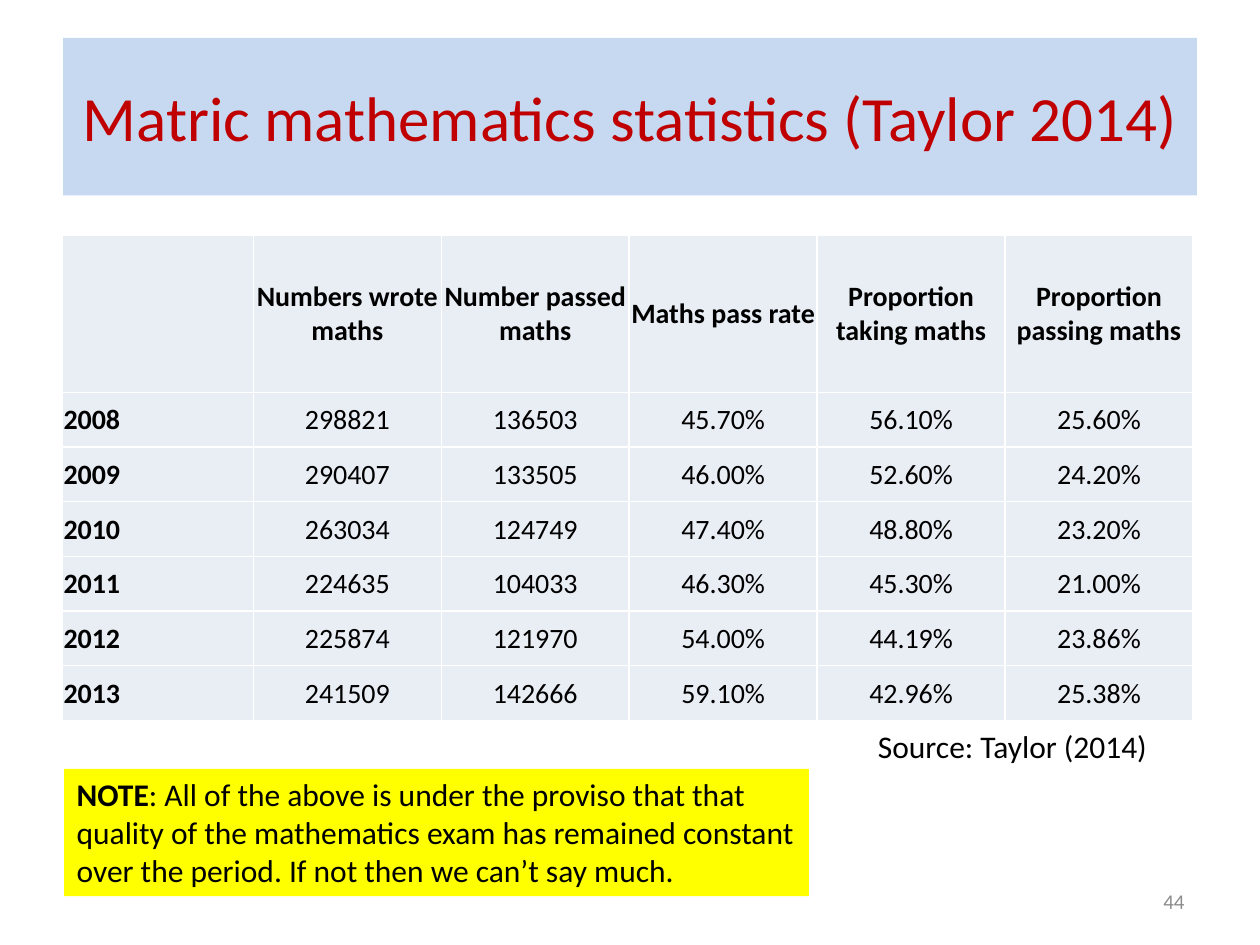
from dataclasses import dataclass

from lxml import etree
from pptx import Presentation
from pptx.dml.color import RGBColor
from pptx.enum import shapes, text
from pptx.oxml.ns import qn
from pptx.util import Pt


@dataclass(frozen=True)
class Theme:
    font: str = "Calibri"
    title_size: float = 36
    body_size: float = 18
    table_size: float = 16
    number_size: float = 12
    ink: str = "000000"
    title_ink: str = "C00000"
    number_ink: str = "8C8C8C"
    title_fill: str = "C6D9F1"
    cell_fill: str = "E9EDF4"
    note_fill: str = "FFFF00"
    border: str = "FFFFFF"


@dataclass(frozen=True)
class Box:
    left: float
    top: float
    width: float
    height: float

    def lengths(self):
        return Pt(self.left), Pt(self.top), Pt(self.width), Pt(self.height)


@dataclass(frozen=True)
class MatricYear:
    year: str
    wrote: str
    passed: str
    pass_rate: str
    taking: str
    passing: str

    def cells(self):
        return (self.year, self.wrote, self.passed, self.pass_rate, self.taking, self.passing)


THEME = Theme()
LEFT, CENTER, RIGHT = text.PP_ALIGN.LEFT, text.PP_ALIGN.CENTER, text.PP_ALIGN.RIGHT
MIDDLE, TOP = text.MSO_ANCHOR.MIDDLE, text.MSO_ANCHOR.TOP

TITLE_BOX = Box(36, 21.6, 648, 90)
TABLE_BOX = Box(35.6, 134.2, 646.2, 277.5)
SOURCE_BOX = Box(494.6, 412, 187.2, 29)
NOTE_BOX = Box(36.7, 439.4, 425.5, 72.7)
NUMBER_BOX = Box(516, 500.5, 168, 28.7)
YEAR_WIDTH, HEADER_HEIGHT, CELL_MARGIN = 109.2, 90, 0.72

HEADERS = ("", "Numbers wrote maths", "Number passed maths", "Maths pass rate",
           "Proportion taking maths", "Proportion passing maths")
RESULTS = (
    MatricYear("2008", "298821", "136503", "45.70%", "56.10%", "25.60%"),
    MatricYear("2009", "290407", "133505", "46.00%", "52.60%", "24.20%"),
    MatricYear("2010", "263034", "124749", "47.40%", "48.80%", "23.20%"),
    MatricYear("2011", "224635", "104033", "46.30%", "45.30%", "21.00%"),
    MatricYear("2012", "225874", "121970", "54.00%", "44.19%", "23.86%"),
    MatricYear("2013", "241509", "142666", "59.10%", "42.96%", "25.38%"),
)
NOTE = (": All of the above is under the proviso that that quality of the mathematics exam "
        "has remained constant over the period. If not then we can’t say much.")


def write(frame, words: str, *, size: float, color: str = THEME.ink, bold: bool = False,
          align=LEFT, anchor=TOP) -> None:
    """Append a run to the frame's first paragraph."""
    frame.word_wrap = True
    frame.vertical_anchor = anchor
    paragraph = frame.paragraphs[0]
    paragraph.alignment = align
    run = paragraph.add_run()
    run.text = words
    run.font.name = THEME.font
    run.font.size = Pt(size)
    run.font.bold = bold
    run.font.color.rgb = RGBColor.from_string(color)


def fill(target, color: str) -> None:
    target.fill.solid()
    target.fill.fore_color.rgb = RGBColor.from_string(color)


def add_borders(cell) -> None:
    """Draw one-point lines; they must precede the fill in the cell's XML."""
    properties = cell._tc.get_or_add_tcPr()
    for place, side in enumerate(("lnL", "lnR", "lnT", "lnB")):
        line = etree.Element(qn(f"a:{side}"), w=str(Pt(1)))
        solid = etree.SubElement(line, qn("a:solidFill"))
        etree.SubElement(solid, qn("a:srgbClr"), val=THEME.border)
        properties.insert(place, line)


def format_cell(cell, words: str, *, bold: bool, align) -> None:
    fill(cell, THEME.cell_fill)
    add_borders(cell)
    cell.margin_left = cell.margin_right = cell.margin_top = Pt(CELL_MARGIN)
    cell.margin_bottom = Pt(0)
    cell.vertical_anchor = MIDDLE
    if words:
        write(cell.text_frame, words, size=THEME.table_size, bold=bold, align=align,
              anchor=None)


def add_results(slide) -> None:
    rows = (HEADERS, *(result.cells() for result in RESULTS))
    table = slide.shapes.add_table(len(rows), len(HEADERS), *TABLE_BOX.lengths()).table
    measure_width = (TABLE_BOX.width - YEAR_WIDTH) / (len(HEADERS) - 1)
    year_height = (TABLE_BOX.height - HEADER_HEIGHT) / len(RESULTS)
    for c, column in enumerate(table.columns):
        column.width = Pt(measure_width if c else YEAR_WIDTH)
    for r, row in enumerate(rows):
        table.rows[r].height = Pt(year_height if r else HEADER_HEIGHT)
        for c, words in enumerate(row):
            format_cell(table.cell(r, c), words, bold=r == 0 or c == 0,
                        align=CENTER if c else text.PP_ALIGN.JUSTIFY)


def add_title(slide) -> None:
    title = slide.shapes.title
    title.left, title.top, title.width, title.height = TITLE_BOX.lengths()
    fill(title, THEME.title_fill)
    write(title.text_frame, "Matric mathematics statistics (Taylor 2014)",
          size=THEME.title_size, color=THEME.title_ink, align=CENTER, anchor=MIDDLE)


def add_note(slide) -> None:
    note = slide.shapes.add_shape(shapes.MSO_SHAPE.RECTANGLE, *NOTE_BOX.lengths())
    note.shadow.inherit = False
    note.line.fill.background()
    fill(note, THEME.note_fill)
    write(note.text_frame, "NOTE", size=THEME.body_size, bold=True)
    write(note.text_frame, NOTE, size=THEME.body_size)


def add_label(slide, box: Box, words: str, **style) -> None:
    write(slide.shapes.add_textbox(*box.lengths()).text_frame, words, **style)


def main() -> None:
    deck = Presentation()
    deck.slide_width, deck.slide_height = Pt(720), Pt(540)
    slide = deck.slides.add_slide(deck.slide_layouts[5])
    add_title(slide)
    add_results(slide)
    add_label(slide, NUMBER_BOX, "44", size=THEME.number_size, color=THEME.number_ink,
              align=RIGHT, anchor=MIDDLE)
    add_label(slide, SOURCE_BOX, "Source: Taylor (2014)", size=THEME.body_size)
    add_note(slide)
    deck.save("out.pptx")


if __name__ == "__main__":
    main()
